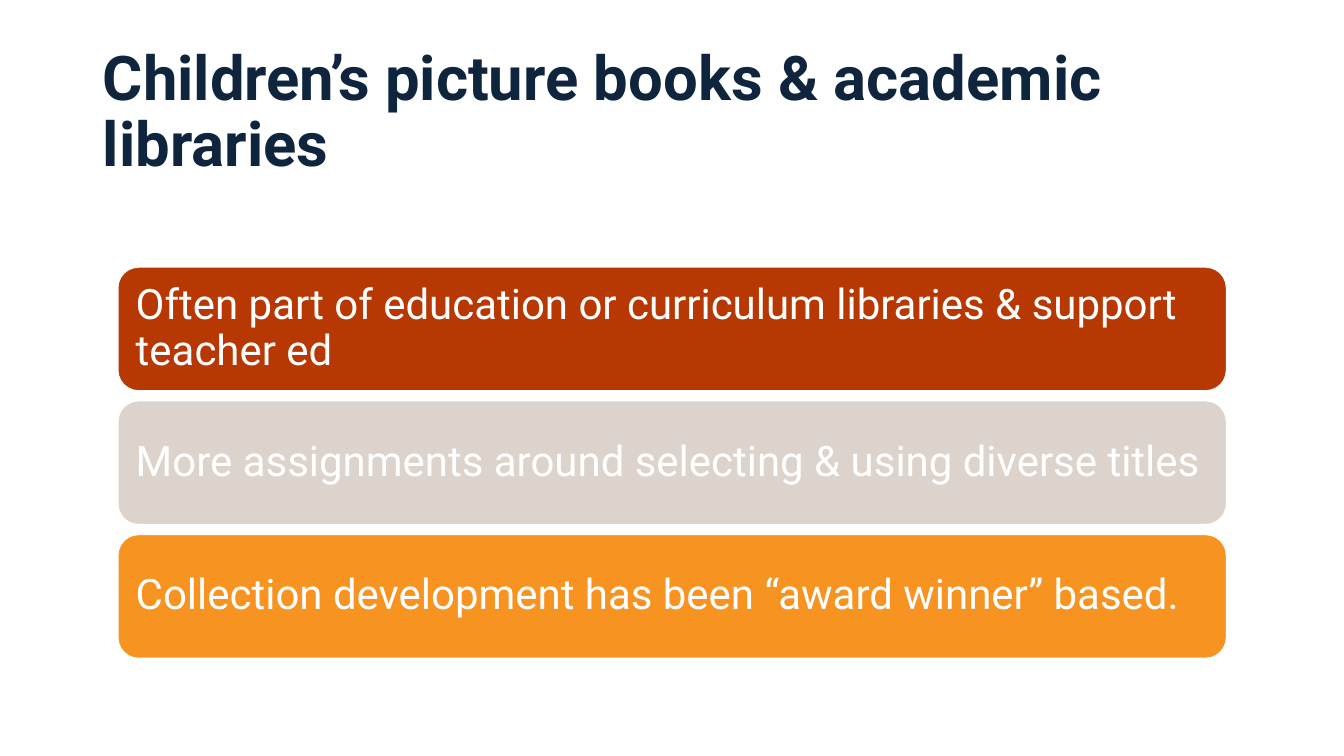
from collections import namedtuple

from pptx import Presentation
from pptx import util as u
from pptx.dml.color import RGBColor
from pptx.enum import shapes, text

Box = namedtuple("Box", "left top width height")

COLORS = {
    "navy": "0F253E",
    "white": "FFFFFF",
    "rust": "B83803",
    "stone": "DCD3CC",
    "orange": "F79320",
}
FONT = "Roboto"
TITLE = "Children’s picture books & academic libraries"
POINTS = [
    ("Often part of education or curriculum libraries & support teacher ed", "rust"),
    ("More assignments around selecting & using diverse titles", "stone"),
    ("Collection development has been “award winner” based.", "orange"),
]


def color(name):
    return RGBColor.from_string(COLORS[name])


def place(box):
    return [u.Cm(length) for length in box]


def write(frame, words, size, color_name, bold=False):
    frame.word_wrap = True
    frame.vertical_anchor = text.MSO_ANCHOR.MIDDLE
    para = frame.paragraphs[0]
    para.alignment = text.PP_ALIGN.LEFT
    para.line_spacing = 0.9
    span = para.add_run()
    span.text = words
    span.font.name = FONT
    span.font.size = u.Pt(size)
    span.font.bold = bold
    span.font.color.rgb = color(color_name)


def add_title(page, box):
    title = page.shapes.add_textbox(*place(box))
    write(title.text_frame, TITLE, 44, "navy", bold=True)


def add_bar(page, box, words, fill):
    bar = page.shapes.add_shape(shapes.MSO_SHAPE.ROUNDED_RECTANGLE, *place(box))
    bar.shadow.inherit = False
    bar.fill.solid()
    bar.fill.fore_color.rgb = color(fill)
    bar.line.color.rgb = color("white")
    bar.line.width = u.Pt(1)
    frame = bar.text_frame
    frame.margin_left = frame.margin_right = u.Cm(0.3)
    frame.margin_top = frame.margin_bottom = u.Cm(0.3)
    write(frame, words, 30, "white")


def add_bars(page, box, gap=0.25):
    height = (box.height - gap * (len(POINTS) - 1)) / len(POINTS)
    for index, (words, fill) in enumerate(POINTS):
        top = box.top + index * (height + gap)
        add_bar(page, Box(box.left, top, box.width, height), words, fill)


def main():
    deck = Presentation()
    deck.slide_width, deck.slide_height = u.Cm(33.87), u.Cm(19.05)
    page = deck.slides.add_slide(deck.slide_layouts[6])
    add_title(page, Box(2.34, 1.02, 29.64, 3.68))
    add_bars(page, Box(2.97, 6.73, 27.94, 9.86))
    deck.save("out.pptx")


if __name__ == "__main__":
    main()
